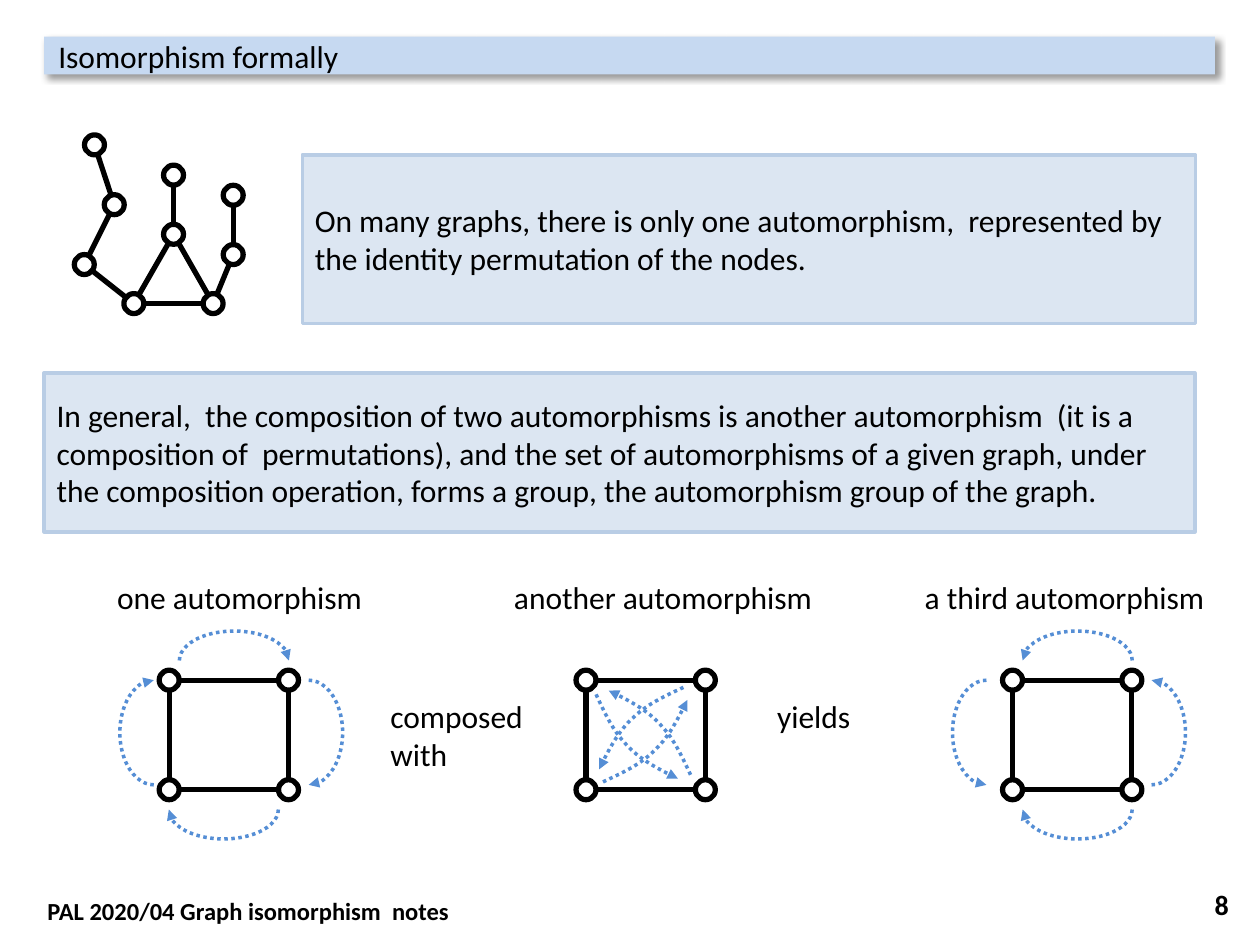
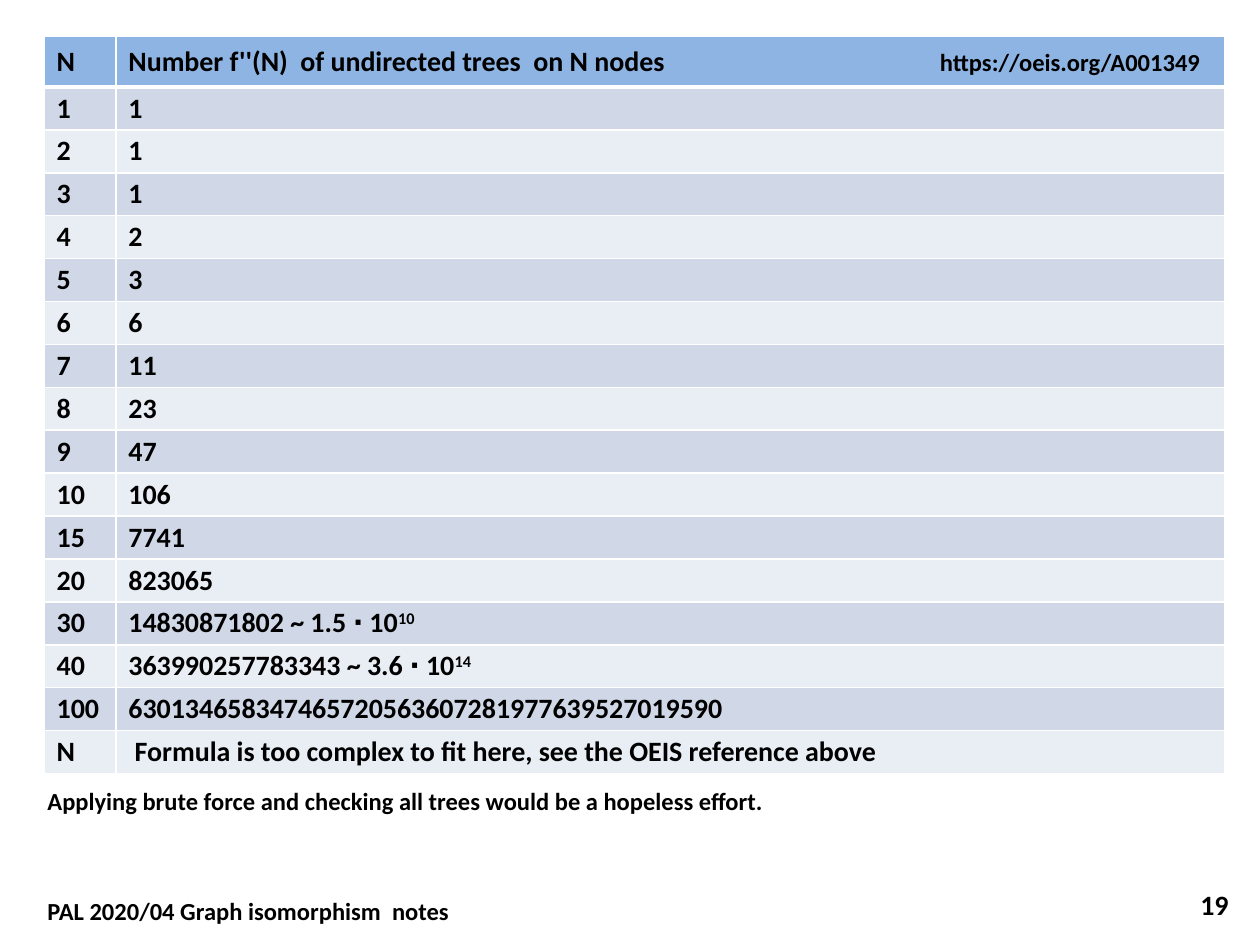
from dataclasses import dataclass
from lxml import etree
from pptx import Presentation
from pptx.dml.color import RGBColor as Rgb
from pptx.enum.dml import MSO_LINE as Dash
from pptx.enum.shapes import MSO_CONNECTOR as Link, MSO_SHAPE as Kind
from pptx.enum.text import MSO_ANCHOR as Anchor, MSO_AUTO_SIZE as Fit, PP_ALIGN as Align
from pptx.oxml import parse_xml as to_xml
from pptx.oxml.ns import nsdecls, qn
from pptx.util import Pt


@dataclass(frozen=True)
class Theme:
    font: str = "Calibri"
    ink: str = "000000"
    paper: str = "FFFFFF"
    band: str = "C6D9F1"
    panel: str = "DCE6F2"
    rim: str = "B9CDE5"
    arc: str = "558ED5"
    head: str = "8EB4E3"
    odd: str = "D0D8E8"
    even: str = "E9EDF4"
    body: int = 18
    cell: int = 16
    note: int = 14
    edge: int = 3
    thin: int = 2


def set_all(obj, **values):
    for name, value in values.items():
        setattr(obj, name, value)


def bezier(a, b, c, d, steps=10):
    """Points along a cubic curve, without its start."""
    for k in range(1, steps + 1):
        t = k / steps
        u = 1 - t
        yield tuple(u**3 * p + 3 * u * u * t * q + 3 * u * t * t * r + t**3 * s
                    for p, q, r, s in zip(a, b, c, d))


class Deck:
    def __init__(self, theme):
        self.theme = theme
        self.prs = Presentation()
        set_all(self.prs, slide_width=Pt(720), slide_height=Pt(540))
        self.slide = None

    @property
    def shapes(self):
        return self.slide.shapes

    def page(self, number, title=None):
        layout = self.prs.slide_layouts[5 if title else 6]
        self.slide = self.prs.slides.add_slide(layout)
        if title:
            self.title(title)
        t = self.theme
        self.label(str(number), 541.4, 502.6, 167.8, 28.8, size=t.cell, bold=True,
                   align=Align.RIGHT, anchor=Anchor.MIDDLE)
        self.label("PAL 2020/04 Graph isomorphism  notes", 20, 508.3, 675, 24.5,
                   size=t.note, bold=True)

    # Text
    def style(self, run, size, bold=False):
        set_all(run.font, name=self.theme.font, size=Pt(size), bold=bold)
        run.font.color.rgb = Rgb.from_string(self.theme.ink)

    def put(self, frame, text, size, bold=False, align=Align.LEFT, **look):
        set_all(frame, **{"word_wrap": True, "auto_size": Fit.NONE, **look})
        frame.text = text
        for para in frame.paragraphs:
            para.alignment = align
            for run in para.runs:
                self.style(run, size, bold)

    def title(self, text):
        box = self.shapes.title
        set_all(box, left=Pt(25.2), top=Pt(20.9), width=Pt(669), height=Pt(21.6))
        self.fill(box, self.theme.band)
        self.put(box.text_frame, text, self.theme.body,
                 vertical_anchor=Anchor.MIDDLE, margin_left=Pt(8.1),
                 margin_right=0, margin_top=0, margin_bottom=0)
        box._element.spPr.append(to_xml(
            f'<a:effectLst {nsdecls("a")}><a:outerShdw blurRad="{Pt(4)}" dist="{Pt(3)}" '
            f'dir="2700000" algn="tl" rotWithShape="0"><a:srgbClr val="{self.theme.ink}">'
            '<a:alpha val="40000"/></a:srgbClr></a:outerShdw></a:effectLst>'))

    def label(self, text, x, y, w, h, size=None, bold=False, align=Align.LEFT,
              anchor=Anchor.TOP, wrap=True):
        box = self.shapes.add_textbox(Pt(x), Pt(y), Pt(w), Pt(h))
        self.put(box.text_frame, text, size or self.theme.body, bold, align,
                 vertical_anchor=anchor, word_wrap=wrap)

    # Shapes and lines
    def fill(self, obj, color):
        obj.fill.solid()
        obj.fill.fore_color.rgb = Rgb.from_string(color)

    def stroke(self, line, color, width):
        self.fill(line, color)
        line.width = Pt(width)

    def shape(self, kind, x, y, w, h, fill, line, width):
        item = self.shapes.add_shape(kind, Pt(x), Pt(y), Pt(w), Pt(h))
        item.shadow.inherit = False
        self.fill(item, fill)
        self.stroke(item.line, line, width)
        return item

    def panel(self, text, x, y, w, h):
        t = self.theme
        box = self.shape(Kind.RECTANGLE, x, y, w, h, t.panel, t.rim, t.thin)
        self.put(box.text_frame, text, t.body, vertical_anchor=Anchor.MIDDLE)

    def graph(self, nodes, edges, size=11.4):
        t = self.theme
        for a, b in edges:
            ends = [Pt(v) for v in (*nodes[a], *nodes[b])]
            line = self.shapes.add_connector(Link.STRAIGHT, *ends)
            self.stroke(line.line, t.ink, t.edge)
            etree.SubElement(line._element.spPr, qn("a:effectLst"))
        for x, y in nodes:
            self.shape(Kind.OVAL, x - size / 2, y - size / 2, size, size,
                       t.paper, t.ink, t.edge)

    def dotted(self, item):
        item.shadow.inherit = False
        item.fill.background()
        self.stroke(item.line, self.theme.arc, self.theme.thin)
        item.line.dash_style = Dash.ROUND_DOT
        tip = etree.SubElement(item.line._get_or_add_ln(), qn("a:tailEnd"))
        tip.set("type", "triangle")

    def bow(self, cx, cy, w, h, turn, flip):
        item = self.shapes.add_shape(Kind.LEFT_BRACKET, Pt(cx - w / 2), Pt(cy - h / 2),
                                     Pt(w), Pt(h))
        item.adjustments[0] = 2.125
        item.rotation = turn
        if flip:
            item._element.spPr.xfrm.set("flipH", "1")
        self.dotted(item)

    def curve(self, points):
        first, *rest = [(Pt(x), Pt(y)) for x, y in points]
        pen = self.shapes.build_freeform(*first)
        pen.add_line_segments(rest, close=False)
        self.dotted(pen.convert_to_shape())

    # Table
    def border(self, cell, **sides):
        for side, width in sides.items():
            cell._tc.get_or_add_tcPr().append(to_xml(
                f'<a:ln{side} {nsdecls("a")} w="{Pt(width)}"><a:solidFill>'
                f'<a:srgbClr val="{self.theme.paper}"/></a:solidFill></a:ln{side}>'))

    def table(self, rows, x, y, widths, top, step):
        t = self.theme
        high = top + step * (len(rows) - 1)
        grid = self.shapes.add_table(len(rows), len(widths), Pt(x), Pt(y),
                                     Pt(sum(widths)), Pt(high)).table
        set_all(grid, first_row=False, horz_banding=False)
        for col, width in zip(grid.columns, widths):
            col.width = Pt(width)
        for i, row in enumerate(rows):
            grid.rows[i].height = Pt(step if i else top)
            color = (t.odd if i % 2 else t.even) if i else t.head
            for cell, text in zip(grid.rows[i].cells, row):
                set_all(cell, margin_left=Pt(7.2), margin_right=Pt(8.6), margin_top=0,
                        margin_bottom=0, vertical_anchor=Anchor.MIDDLE)
                self.border(cell, L=1, R=1, T=3 if i == 1 else 1, B=1 if i else 3)
                self.fill(cell, color)
                base, _, power = text.partition("^")
                self.put(cell.text_frame, base, t.cell, True)
                if power:
                    self.extra(cell, power, t.cell).font._element.set("baseline", "30000")
        return grid

    def extra(self, cell, text, size):
        run = cell.text_frame.paragraphs[0].add_run()
        run.text = text
        self.style(run, size, True)
        return run


def isomorphism(deck):
    deck.page(8, "Isomorphism formally")

    # Graph with only the identity automorphism
    nodes = [(54, 82.8), (65.3, 117), (48.2, 151.2), (76.5, 173.5), (121.8, 173.5),
             (133.3, 145.5), (133.3, 111.6), (99.2, 133.9), (99.2, 100.1)]
    chain = [(k, k + 1) for k in range(6)]
    deck.graph(nodes, chain + [(3, 7), (4, 7), (7, 8)])

    # Statements
    deck.panel("On many graphs, there is only one automorphism,  represented by the "
               "identity permutation of the nodes.", 172.8, 88.5, 510.4, 96.5)
    deck.panel("In general,  the composition of two automorphisms is another automorphism  "
               "(it is a composition of  permutations), and the set of automorphisms of a "
               "given graph, under the composition operation, forms a group, the "
               "automorphism group of the graph.", 25.2, 213.1, 657.6, 90.8)

    # Three squares
    mid, half_w, half_h = 420, 34.1, 31.3
    one, other, third = 130.8, 369, 612.7
    for cx in (one, other, third):
        corners = [(cx + sx * half_w, mid + sy * half_h)
                   for sx, sy in ((-1, -1), (1, -1), (1, 1), (-1, 1))]
        deck.graph(corners, [(k, (k + 1) % 4) for k in range(4)])

    # Arrows around a square: offset, size, turn, flip
    flat, tall = (16.8, 62.6), (19.4, 59.8)
    bows = {
        one: [(3, -51, flat, 90, False), (-3, 51, flat, 270, False),
              (55.3, -1.4, tall, 180, False), (-52.6, -1.4, tall, 0, False)],
        third: [(3, -51, flat, 270, True), (3, 51, flat, 270, False),
                (55.1, -1.4, tall, 0, True), (-58.7, -1.4, tall, 180, True)],
    }
    for cx, arcs in bows.items():
        for dx, dy, size, turn, flip in arcs:
            deck.bow(cx + dx, mid + dy, *size, turn, flip)

    # Crossing arrows: one curve in four quarter turns
    knots = [(27, 23), (22, 12.2), (17, 1.4), (9, -6.5), (1, -15), (-9.7, -20.2),
             (-19.8, -25.2)]
    swing = [knots[0], *bezier(*knots[:4]), *bezier(*knots[3:])]
    for _ in range(4):
        deck.curve([(other - 1.4 + x, mid - 0.2 + y) for x, y in swing])
        swing = [(-y, x) for x, y in swing]

    # Captions
    deck.label("composed\nwith", 216, 394.6, 91.4, 51, wrap=False)
    deck.label("yields", 437, 394.6, 57, 29, wrap=False)
    for text, x, w in (("one automorphism", 59.8, 175.7),
                       ("another automorphism", 286.6, 198.7),
                       ("a third automorphism", 521.3, 198.7)):
        deck.label(text, x, 326.9, w, 29)


def trees(deck):
    deck.page(19)
    rows = [
        ("N", "Number f''(N)  of undirected trees  on N nodes"),
        ("1", "1"), ("2", "1"), ("3", "1"), ("4", "2"), ("5", "3"), ("6", "6"),
        ("7", "11"), ("8", "23"), ("9", "47"), ("10", "106"), ("15", "7741"),
        ("20", "823065"),
        ("30", "14830871802 ~ 1.5 ∙ 10^10"),
        ("40", "363990257783343 ~ 3.6 ∙ 10^14"),
        ("100", "630134658347465720563607281977639527019590"),
        ("N", " Formula is too complex to fit here, see the OEIS reference above"),
    ]
    grid = deck.table(rows, 25.2, 20.9, (41, 633.6), 28.8, 24.53)

    # Reference at a tab stop in the header
    cell = grid.cell(0, 1)
    deck.extra(cell, "\thttps://oeis.org/A001349", deck.theme.note)
    prop = cell.text_frame.paragraphs[0]._p.get_or_add_pPr()
    prop.append(to_xml(f'<a:tabLst {nsdecls("a")}><a:tab pos="{Pt(463.7)}" algn="l"/>'
                       '</a:tabLst>'))

    deck.label("Applying brute force and checking all trees would be a hopeless effort.",
               20, 445.7, 680, 24.5, size=deck.theme.note, bold=True)


def main():
    deck = Deck(Theme())
    isomorphism(deck)
    trees(deck)
    deck.prs.save("out.pptx")


if __name__ == "__main__":
    main()
